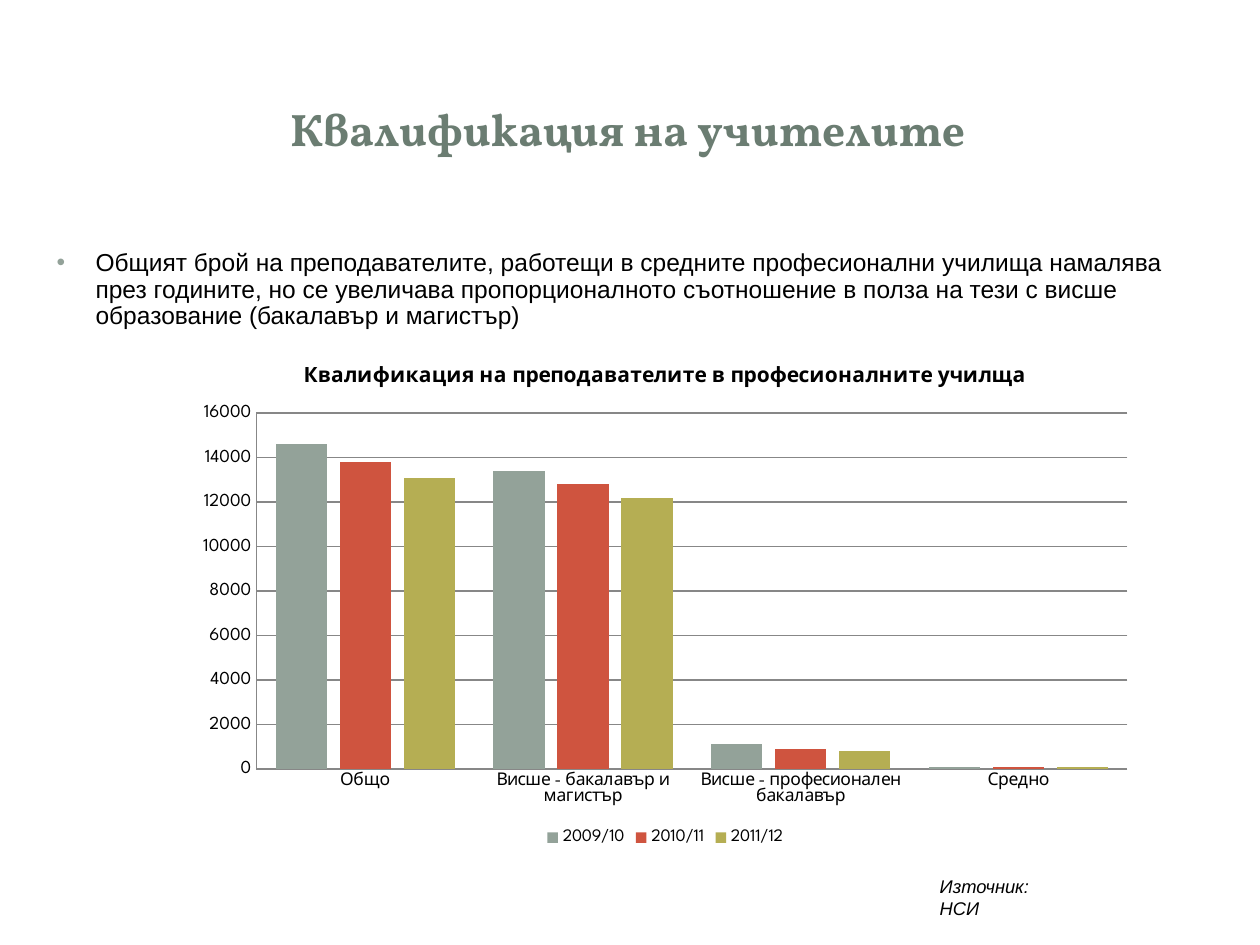
from dataclasses import dataclass

from lxml.etree import SubElement
from pptx import Presentation
from pptx.chart.data import CategoryChartData
from pptx.dml.color import RGBColor
from pptx.enum.chart import XL_CHART_TYPE, XL_LEGEND_POSITION, XL_TICK_MARK
from pptx.enum.lang import MSO_LANGUAGE_ID
from pptx.enum.shapes import MSO_SHAPE
from pptx.enum.text import MSO_ANCHOR, PP_ALIGN
from pptx.oxml.ns import qn
from pptx.util import Emu, Pt

EMU_PER_PX = 9144


@dataclass(frozen=True)
class Theme:
    """Colours, fonts and type sizes of the slide."""

    panel: str = "FFFFFF"
    heading: str = "6B7D72"
    ink: str = "000000"
    bullet: str = "93A299"
    grid: str = "878787"
    heading_font: str = "Vollkorn"
    body_font: str = "Arial"
    chart_font: str = "League Spartan"
    heading_size: float = 26
    body_size: float = 14
    source_size: float = 10.5
    chart_title_size: float = 12
    value_size: float = 10.5
    label_size: float = 10


@dataclass(frozen=True)
class Box:
    """A rectangle in px, 100 to the inch."""

    left: int
    top: int
    width: int
    height: int

    def emu(self) -> tuple:
        """Return the rectangle in EMU."""
        return tuple(px(n) for n in (self.left, self.top, self.width, self.height))


@dataclass(frozen=True)
class Panel:
    """A plain backing panel."""

    box: Box
    outline: MSO_SHAPE = MSO_SHAPE.RECTANGLE
    opacity: int = 100


@dataclass(frozen=True)
class Passage:
    """A piece of text with its place and look."""

    wording: str
    box: Box
    font: str
    size: float
    color: str
    bold: bool = False
    italic: bool = False
    align: PP_ALIGN = PP_ALIGN.LEFT
    anchor: MSO_ANCHOR = MSO_ANCHOR.TOP


@dataclass(frozen=True)
class SchoolYear:
    """Teacher counts of one school year by qualification."""

    name: str
    teachers: tuple
    color: str


THEME = Theme()
PANELS = (
    Panel(Box(10, 11, 980, 729), MSO_SHAPE.ROUNDED_RECTANGLE),
    Panel(Box(30, 30, 940, 145), opacity=83),
    Panel(Box(41, 41, 916, 122)),
)
HEADING = Passage(
    "Квалификация на учителите", Box(47, 45, 903, 114), THEME.heading_font,
    THEME.heading_size, THEME.heading, bold=True,
    align=PP_ALIGN.CENTER, anchor=MSO_ANCHOR.MIDDLE,
)
FINDING = Passage(
    "Общият брой на преподавателите, работещи в средните професионални училища "
    "намалява през годините, но се увеличава пропорционалното съотношение в полза "
    "на тези с висше образование (бакалавър и магистър)",
    Box(35, 194, 929, 74), THEME.body_font, THEME.body_size, THEME.ink,
)
SOURCE = Passage(
    "Източник: НСИ", Box(736, 690, 122, 27), THEME.body_font,
    THEME.source_size, THEME.ink, italic=True,
)
CHART_TITLE = "Квалификация на преподавателите в професионалните училща"
QUALIFICATIONS = (
    "Общо", "Висше - бакалавър и магистър", "Висше - професионален бакалавър", "Средно",
)
YEARS = (
    SchoolYear("2009/10", (14600, 13400, 1100, 100), "93A299"),
    SchoolYear("2010/11", (13800, 12800, 900, 100), "CF543F"),
    SchoolYear("2011/12", (13100, 12200, 800, 100), "B5AE53"),
)


def px(length: int) -> Emu:
    """Turn px into EMU."""
    return Emu(length * EMU_PER_PX)


def style_font(font, name: str, size: float, color: str, bold=False, italic=False) -> None:
    """Set the face, size, colour and style of a font."""
    font.name, font.size = name, Pt(size)
    font.bold, font.italic = bold, italic
    font.color.rgb = RGBColor.from_string(color)


def add_panel(slide, panel: Panel) -> None:
    """Add a backing panel without an outline."""
    backing = slide.shapes.add_shape(panel.outline, *panel.box.emu())
    backing.shadow.inherit = False
    backing.line.fill.background()
    backing.fill.solid()
    backing.fill.fore_color.rgb = RGBColor.from_string(THEME.panel)
    if panel.outline == MSO_SHAPE.ROUNDED_RECTANGLE:
        backing.adjustments[0] = 0.02
    if panel.opacity < 100:
        tint = backing._element.spPr.find(qn("a:solidFill")).find(qn("a:srgbClr"))
        SubElement(tint, qn("a:alpha"), val=str(panel.opacity * 1000))


def add_passage(slide, passage: Passage):
    """Add a text box and return its paragraph."""
    frame = slide.shapes.add_textbox(*passage.box.emu()).text_frame
    frame.word_wrap = True
    frame.vertical_anchor = passage.anchor
    frame.text = passage.wording
    paragraph = frame.paragraphs[0]
    paragraph.alignment = passage.align
    font = paragraph.runs[0].font
    font.language_id = MSO_LANGUAGE_ID.BULGARIAN
    style_font(font, passage.font, passage.size, passage.color, passage.bold, passage.italic)
    return paragraph


def add_bullet(paragraph, indent: int) -> None:
    """Give a paragraph a coloured bullet with a hanging indent."""
    paragraph.line_spacing = 0.9
    paragraph.space_before = Pt(2.8)
    properties = paragraph._p.get_or_add_pPr()
    properties.set("marL", str(px(indent)))
    properties.set("indent", str(-px(indent)))
    color = SubElement(properties, qn("a:buClr"))
    SubElement(color, qn("a:srgbClr"), val=THEME.bullet)
    SubElement(properties, qn("a:buFont"), typeface=THEME.body_font)
    SubElement(properties, qn("a:buChar"), char="•")


def style_axis(axis, size: float) -> None:
    """Set the labels and line of an axis."""
    axis.major_tick_mark = axis.minor_tick_mark = XL_TICK_MARK.NONE
    axis.format.line.color.rgb = RGBColor.from_string(THEME.grid)
    style_font(axis.tick_labels.font, THEME.chart_font, size, THEME.ink)


def add_teacher_chart(slide, box: Box) -> None:
    """Add the clustered columns of teachers by qualification."""
    counts = CategoryChartData()
    counts.categories = QUALIFICATIONS
    for year in YEARS:
        counts.add_series(year.name, year.teachers)
    kind = XL_CHART_TYPE.COLUMN_CLUSTERED
    chart = slide.shapes.add_chart(kind, *box.emu(), counts).chart
    style_font(chart.font, THEME.chart_font, 18, THEME.ink)

    chart.has_title = True
    title = chart.chart_title
    title.include_in_layout = False
    title.text_frame.text = CHART_TITLE
    style_font(title.text_frame.paragraphs[0].runs[0].font, THEME.chart_font,
               THEME.chart_title_size, THEME.ink, bold=True)
    chart.has_legend = True
    chart.legend.position = XL_LEGEND_POSITION.BOTTOM
    chart.legend.include_in_layout = False
    style_font(chart.legend.font, THEME.chart_font, THEME.label_size, THEME.ink)

    style_axis(chart.category_axis, THEME.label_size)
    style_axis(chart.value_axis, THEME.value_size)
    scale = chart.value_axis
    scale.minimum_scale, scale.maximum_scale, scale.major_unit = 0, 16000, 2000
    scale.major_gridlines.format.line.color.rgb = RGBColor.from_string(THEME.grid)
    plot = chart.plots[0]
    plot.gap_width, plot.overlap, plot.vary_by_categories = 75, -25, False
    for columns, year in zip(plot.series, YEARS):
        columns.format.fill.solid()
        columns.format.fill.fore_color.rgb = RGBColor.from_string(year.color)


def main() -> None:
    """Build the slide on teacher qualification."""
    deck = Presentation()
    deck.slide_width, deck.slide_height = px(1000), px(750)
    slide = deck.slides.add_slide(deck.slide_layouts[6])
    for panel in PANELS:
        add_panel(slide, panel)
    add_passage(slide, HEADING)
    add_bullet(add_passage(slide, FINDING), indent=31)
    add_passage(slide, SOURCE)
    add_teacher_chart(slide, Box(146, 274, 764, 401))
    deck.save("out.pptx")


if __name__ == "__main__":
    main()
